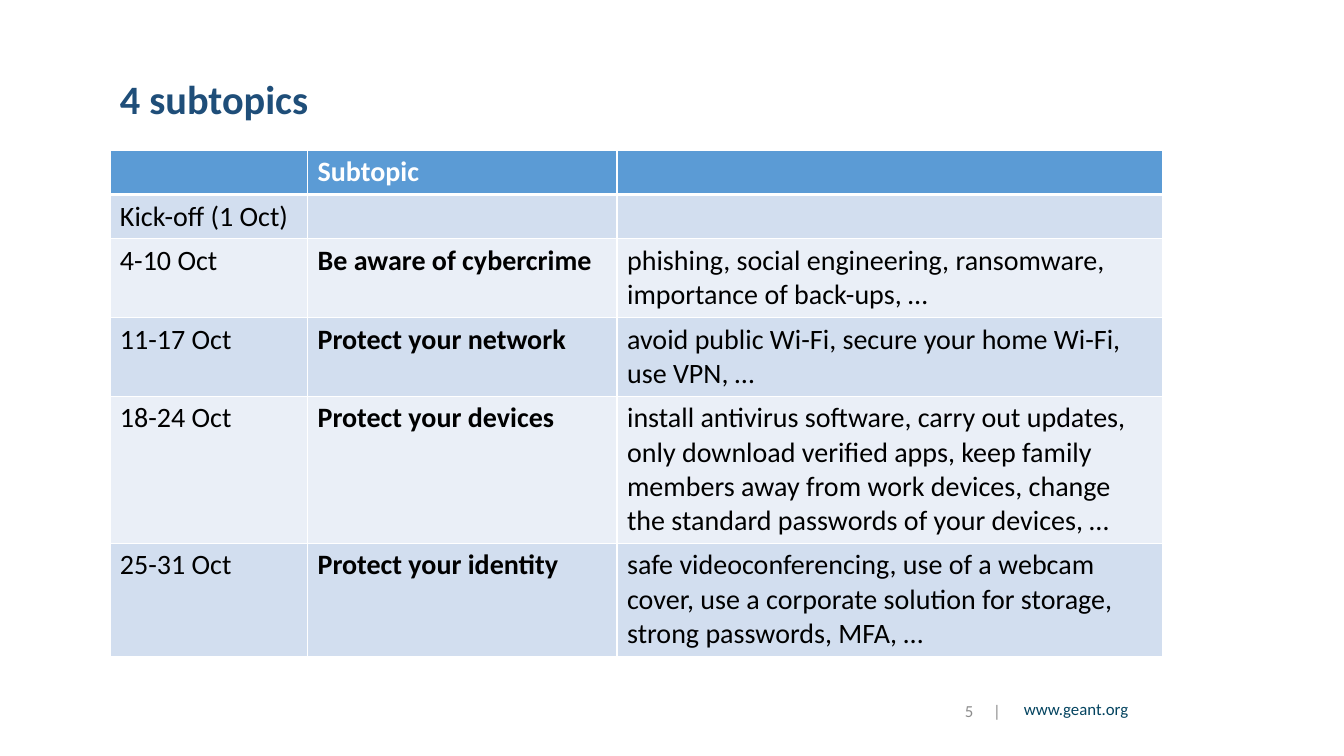
import pptx
import pptx.dml.color
import pptx.enum.text
import pptx.oxml
import pptx.oxml.ns
import pptx.util
from pptx.util import Inches

FONT = "Calibri"
WHITE = "FFFFFF"
HEADER_BLUE = "5B9BD5"
BAND_FILLS = ("EAEFF7", "D2DEEF")
COLUMN_WIDTHS = (1.96, 3.07, 5.41)
ROW_HEIGHTS = (0.44, 0.44, 0.78, 0.78, 1.46, 1.12)
SUBTOPICS = (
    ("", "Subtopic", ""),
    ("Kick-off (1 Oct)", "", ""),
    ("4-10 Oct", "Be aware of cybercrime",
     "phishing, social engineering, ransomware, importance of back-ups, …"),
    ("11-17 Oct", "Protect your network",
     "avoid public Wi-Fi, secure your home Wi-Fi, use VPN, …"),
    ("18-24 Oct", "Protect your devices",
     "install antivirus software, carry out updates, only download verified apps, "
     "keep family members away from work devices, change the standard passwords "
     "of your devices, …"),
    ("25-31 Oct", "Protect your identity",
     "safe videoconferencing, use of a webcam cover, use a corporate solution "
     "for storage, strong passwords, MFA, …"),
)


def rgb(value):
    """Turn a hex string into a colour."""
    return pptx.dml.color.RGBColor.from_string(value)


def style_font(font, size, color, bold=False):
    """Set the typeface, size, colour and weight of a font."""
    font.name = FONT
    font.size = pptx.util.Pt(size)
    font.bold = bold
    font.color.rgb = rgb(color)


def add_label(slide, text, bounds, size, color, bold=False, middle=True):
    """Add a one-paragraph text box and return its text frame."""
    frame = slide.shapes.add_textbox(*map(Inches, bounds)).text_frame
    frame.word_wrap = True
    if middle:
        frame.vertical_anchor = pptx.enum.text.MSO_ANCHOR.MIDDLE
    frame.text = text
    style_font(frame.paragraphs[0].runs[0].font, size, color, bold)
    return frame


def add_tab_stop(paragraph, position):
    """Add a left tab stop at a distance from the text edge."""
    properties = paragraph._p.get_or_add_pPr()
    properties.append(pptx.oxml.parse_xml(
        f'<a:tabLst {pptx.oxml.ns.nsdecls("a")}>'
        f'<a:tab pos="{Inches(position)}" algn="l"/></a:tabLst>'))


def border_cell(cell, widths):
    """Draw white borders, with a width in points for each side."""
    properties = cell._tc.get_or_add_tcPr()
    for index, (side, width) in enumerate(widths.items()):
        properties.insert(index, pptx.oxml.parse_xml(
            f'<a:ln{side} {pptx.oxml.ns.nsdecls("a")} w="{pptx.util.Pt(width)}">'
            f'<a:solidFill><a:srgbClr val="{WHITE}"/></a:solidFill></a:ln{side}>'))


def fill_cell(cell, text, row, column):
    """Write and style one cell of the schedule."""
    is_header = row == 0
    cell.fill.solid()
    cell.fill.fore_color.rgb = rgb(HEADER_BLUE if is_header else BAND_FILLS[row % 2])
    border_cell(cell, {"L": 1, "R": 1, "T": 3 if row == 1 else 1, "B": 3 if is_header else 1})
    paragraph = cell.text_frame.paragraphs[0]
    paragraph.text = text
    color = WHITE if is_header else "000000"
    for run in paragraph.runs:
        style_font(run.font, 20, color, is_header or column == 1)


def add_schedule(slide):
    """Add the table of weeks, subtopics and examples."""
    schedule = slide.shapes.add_table(
        len(SUBTOPICS), len(COLUMN_WIDTHS), Inches(1.09), Inches(1.49),
        Inches(sum(COLUMN_WIDTHS)), Inches(sum(ROW_HEIGHTS))).table
    for column, width in zip(schedule.columns, COLUMN_WIDTHS):
        column.width = Inches(width)
    for row, (height, texts) in enumerate(zip(ROW_HEIGHTS, SUBTOPICS)):
        schedule.rows[row].height = Inches(height)
        for column, text in enumerate(texts):
            fill_cell(schedule.cell(row, column), text, row, column)


def main():
    """Build the subtopics slide."""
    deck = pptx.Presentation()
    deck.slide_width, deck.slide_height = Inches(13.33), Inches(7.5)
    slide = deck.slides.add_slide(deck.slide_layouts[6])

    website = add_label(slide, "www.geant.org", (9.61, 6.91, 1.68, 0.37), 12, "03435F", middle=False)
    website.paragraphs[0].alignment = pptx.enum.text.PP_ALIGN.RIGHT
    website.paragraphs[0].line_spacing = 0.9

    title = add_label(slide, "4 subtopics", (1.09, 0.77, 10.82, 0.47), 28.8, "1F4E79", bold=True)
    title.paragraphs[0].line_spacing = 0.9

    add_schedule(slide)

    page_number = add_label(slide, "5\t|", (9.29, 6.87, 0.73, 0.36), 12, "8C8C8C")
    page_number.margin_left = Inches(0.28)
    page_number.margin_right = 0
    add_tab_stop(page_number.paragraphs[0], 0.28)

    deck.save("out.pptx")


if __name__ == "__main__":
    main()
